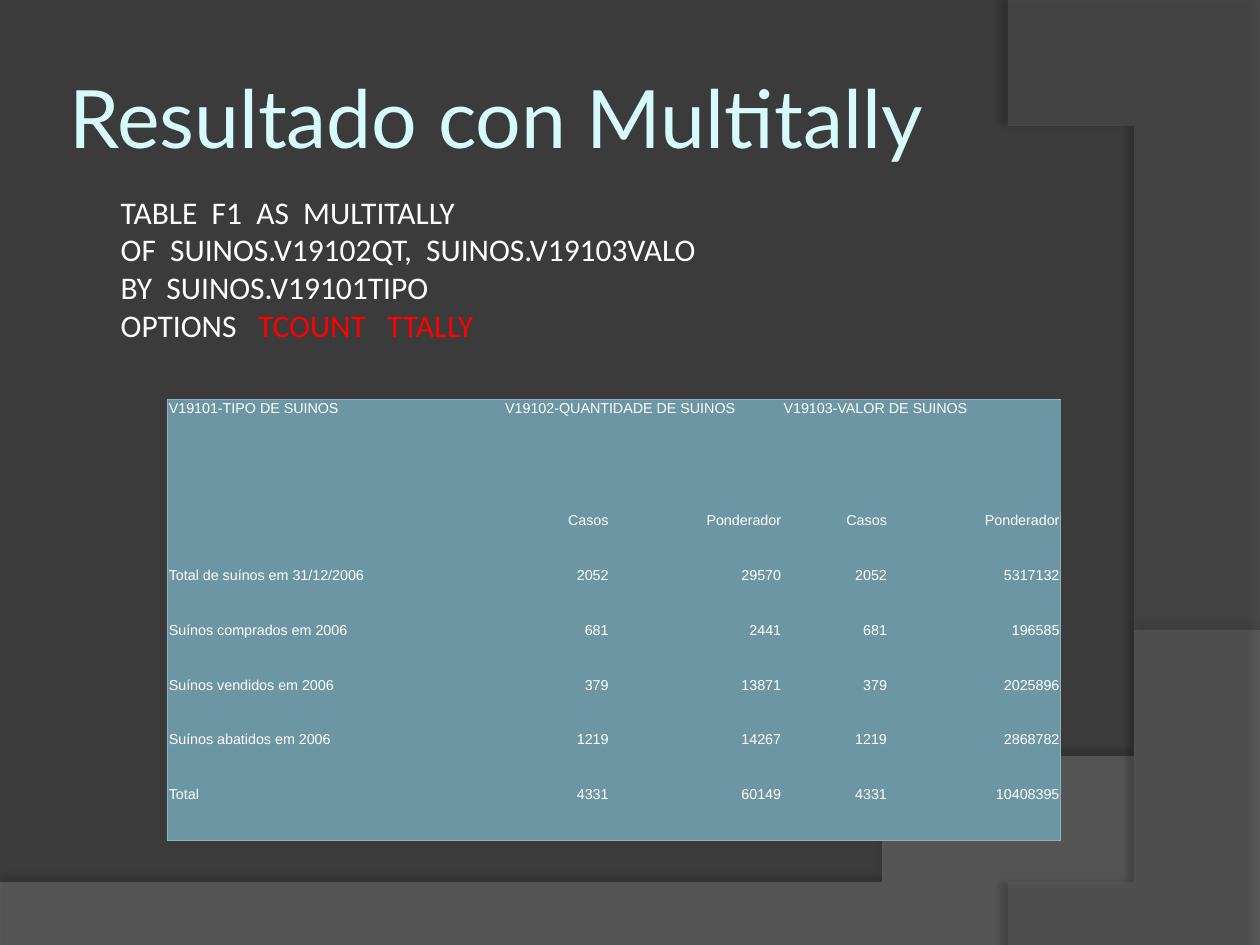
from dataclasses import dataclass

from lxml.etree import SubElement
from pptx import Presentation
from pptx.dml.color import RGBColor as RGB
from pptx.enum.text import MSO_ANCHOR as Anchor, MSO_AUTO_SIZE as AutoSize, PP_ALIGN as Align
from pptx.oxml import parse_xml
from pptx.oxml.ns import nsdecls, qn
from pptx.util import Inches, Pt

Point = tuple[float, float]
NO_TABLE_STYLE = "{2D5ABB26-0587-4C30-8999-92F81FD0307C}"


@dataclass(frozen=True)
class Theme:
    background: str = "3B3B3B"
    title: str = "D7FAFB"
    text: str = "FFFFFF"
    highlight: str = "FF0000"
    table_fill: str = "6C96A4"
    table_border: str = "90B2C0"
    title_font: str = "Lato"
    code_font: str = "Calibri"
    table_font: str = "Arial"
    title_size: float = 46
    code_size: float = 18
    table_size: float = 8.2


@dataclass(frozen=True)
class Wave:
    corners: list[Point]
    curve: tuple[Point, Point, Point, Point]
    color: str
    opacity: int
    shadow_opacity: int
    shadow_distance: float
    shadow_angle: int


THEME = Theme()
WAVES = [
    Wave([(0, 7.05), (0, 7.51), (10, 7.51)],
         ((10, 5.2), (5.59, 7.29), (3.91, 7.19), (0, 7.05)),
         "7F7F7F", 45, 35, 3.5, 270),
    Wave([(10, 0.02), (10, 7.5)],
         ((8.21, 7.5), (9.35, 6.19), (10.18, 3), (8, 0)),
         "5E5E5E", 40, 45, 4, 180),
]
CODE_LINES = [
    [("TABLE  F1  AS  MULTITALLY", THEME.text)],
    [("OF  SUINOS.V19102QT,  SUINOS.V19103VALO", THEME.text)],
    [("BY  SUINOS.V19101TIPO", THEME.text)],
    [("OPTIONS   ", THEME.text), ("TCOUNT   TTALLY", THEME.highlight)],
]
TABLE_ROWS = [
    ["V19101-TIPO DE SUINOS", "V19102-QUANTIDADE DE SUINOS", "", "V19103-VALOR DE SUINOS", ""],
    ["", "Casos", "Ponderador", "Casos", "Ponderador"],
    ["Total de suínos em 31/12/2006", "2052", "29570", "2052", "5317132"],
    ["Suínos comprados em 2006", "681", "2441", "681", "196585"],
    ["Suínos vendidos em 2006", "379", "13871", "379", "2025896"],
    ["Suínos abatidos em 2006", "1219", "14267", "1219", "2868782"],
    ["Total", "4331", "60149", "4331", "10408395"],
]
COLUMN_WIDTHS = [2.67, 0.84, 1.37, 0.84, 1.37]
TABLE_HEIGHT, HEADER_HEIGHT = 3.5, 0.89


def bezier_points(curve: tuple[Point, Point, Point, Point], steps: int = 60) -> list[Point]:
    def at(t: float, axis: int) -> float:
        a, b, c, d = (point[axis] for point in curve)
        u = 1 - t
        return u**3 * a + 3 * u * u * t * b + 3 * u * t * t * c + t**3 * d
    return [(at(i / steps, 0), at(i / steps, 1)) for i in range(steps + 1)]


def set_font(font, name: str, size: float, color: str) -> None:
    font.name, font.size = name, Pt(size)
    font.color.rgb = RGB.from_string(color)


def draw_wave(slide, wave: Wave) -> None:
    start, *rest = wave.corners + bezier_points(wave.curve)
    builder = slide.shapes.build_freeform(*start, scale=Inches(1))
    builder.add_line_segments(rest, close=True)
    shape = builder.convert_to_shape()
    shape.line.fill.background()
    shape.fill.solid()
    shape.fill.fore_color.rgb = RGB.from_string(wave.color)
    properties = shape._element.spPr
    color = properties.find(qn("a:solidFill"))[0]
    SubElement(color, qn("a:alpha"), val=str(wave.opacity * 1000))
    properties.append(parse_xml(
        f'<a:effectLst {nsdecls("a")}><a:outerShdw blurRad="{Pt(4)}" '
        f'dist="{Pt(wave.shadow_distance)}" dir="{wave.shadow_angle * 60000}" '
        f'algn="ctr" rotWithShape="0"><a:srgbClr val="000000">'
        f'<a:alpha val="{wave.shadow_opacity * 1000}"/></a:srgbClr></a:outerShdw></a:effectLst>'))


def place_title(slide, text: str) -> None:
    title = slide.shapes.title
    slide.shapes._spTree.append(title._element)  # in front of the waves
    title.left, title.top = Inches(0.5), Inches(0.3)
    title.width, title.height = Inches(8.17), Inches(1.25)
    frame = title.text_frame
    frame.text = text
    frame.word_wrap = True
    frame.vertical_anchor = Anchor.MIDDLE
    frame.margin_left = frame.margin_right = Inches(0.05)
    frame.margin_top = frame.margin_bottom = Inches(0.05)
    paragraph = frame.paragraphs[0]
    paragraph.alignment = Align.LEFT
    set_font(paragraph.font, THEME.title_font, THEME.title_size, THEME.title)


def add_code(slide) -> None:
    box = slide.shapes.add_textbox(Inches(0.86), Inches(1.48), Inches(5.86), Inches(1.31))
    frame = box.text_frame
    frame.word_wrap = True
    frame.auto_size = AutoSize.SHAPE_TO_FIT_TEXT
    for index, line in enumerate(CODE_LINES):
        paragraph = frame.add_paragraph() if index else frame.paragraphs[0]
        for text, color in line:
            run = paragraph.add_run()
            run.text = text
            set_font(run.font, THEME.code_font, THEME.code_size, color)


def add_borders(cell, sides: dict[str, bool]) -> None:
    """Outline the chosen sides; the lines must precede the fill."""
    drawn = [side for side, wanted in sides.items() if wanted]
    for index, side in enumerate(drawn):
        cell._tc.get_or_add_tcPr().insert(index, parse_xml(
            f'<a:ln{side} {nsdecls("a")} w="{Pt(0.75)}"><a:solidFill>'
            f'<a:srgbClr val="{THEME.table_border}"/></a:solidFill></a:ln{side}>'))


def add_results(slide) -> None:
    row_count, column_count = len(TABLE_ROWS), len(COLUMN_WIDTHS)
    frame = slide.shapes.add_table(row_count, column_count, Inches(1.33), Inches(3.17),
                                   Inches(sum(COLUMN_WIDTHS)), Inches(TABLE_HEIGHT))
    table = frame.table
    table.first_row = table.horz_banding = False
    table._tbl.tblPr.find(qn("a:tableStyleId")).text = NO_TABLE_STYLE
    for column, width in zip(table.columns, COLUMN_WIDTHS):
        column.width = Inches(width)
    body_height = (TABLE_HEIGHT - HEADER_HEIGHT) / (row_count - 1)
    for r, values in enumerate(TABLE_ROWS):
        table.rows[r].height = Inches(body_height if r else HEADER_HEIGHT)
        for c, value in enumerate(values):
            cell = table.cell(r, c)
            cell.text = value
            cell.margin_left = cell.margin_right = cell.margin_top = Inches(0.01)
            cell.margin_bottom = 0
            cell.fill.solid()
            cell.fill.fore_color.rgb = RGB.from_string(THEME.table_fill)
            paragraph = cell.text_frame.paragraphs[0]
            paragraph.alignment = Align.RIGHT if r and c else Align.LEFT
            set_font(paragraph.font, THEME.table_font, THEME.table_size, THEME.text)
            add_borders(cell, {"L": c == 0, "R": c == column_count - 1,
                               "T": r == 0, "B": r == row_count - 1})
    for c in (1, 3):
        table.cell(0, c).merge(table.cell(0, c + 1))


def main() -> None:
    presentation = Presentation()
    presentation.slide_width, presentation.slide_height = Inches(10), Inches(7.5)
    slide = presentation.slides.add_slide(presentation.slide_layouts[5])
    slide.background.fill.solid()
    slide.background.fill.fore_color.rgb = RGB.from_string(THEME.background)
    for wave in WAVES:
        draw_wave(slide, wave)
    place_title(slide, "Resultado con Multitally")
    add_results(slide)
    add_code(slide)
    presentation.save("out.pptx")


if __name__ == "__main__":
    main()
